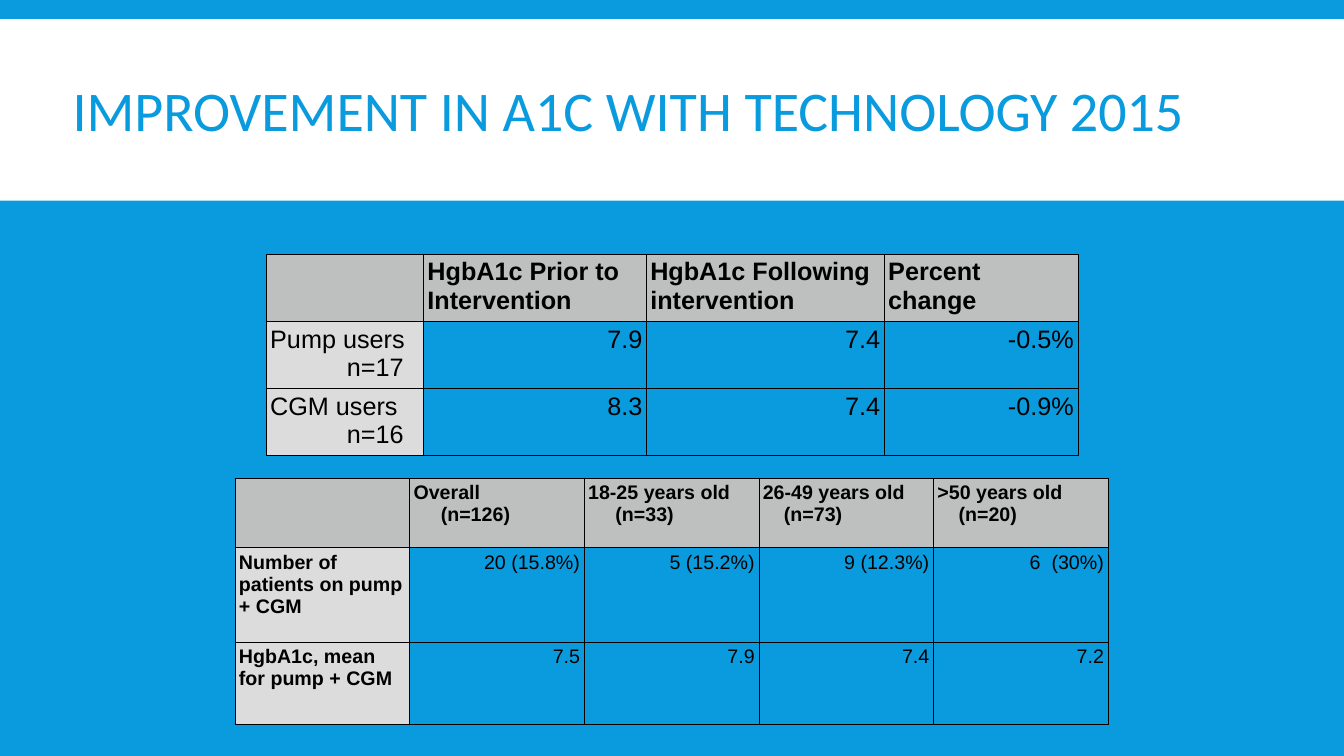
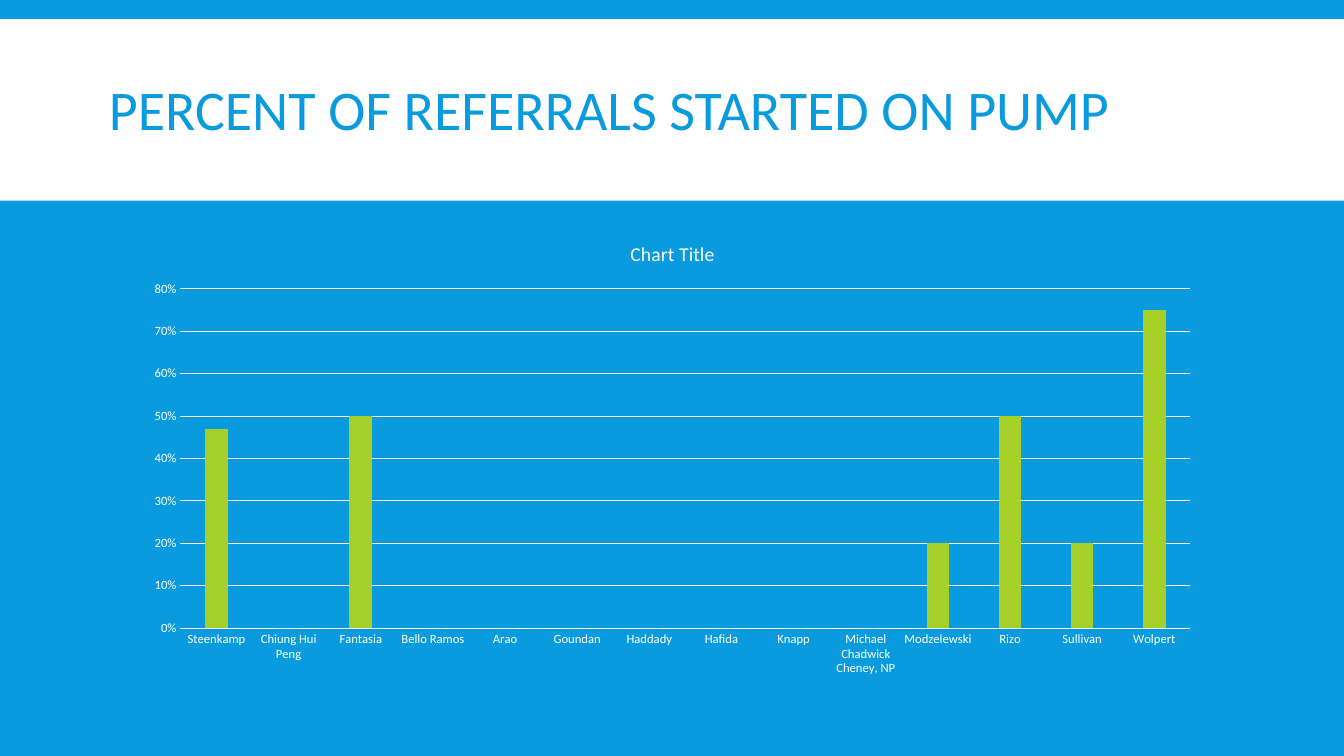
from dataclasses import dataclass
from typing import Any

from lxml.etree import SubElement
from pptx import Presentation
from pptx.chart.data import CategoryChartData
from pptx.dml.color import RGBColor
from pptx.enum.chart import XL_CHART_TYPE, XL_TICK_MARK
from pptx.enum.shapes import MSO_SHAPE
from pptx.enum.text import MSO_ANCHOR, MSO_AUTO_SIZE, PP_ALIGN
from pptx.oxml import parse_xml
from pptx.oxml.ns import nsdecls, qn
from pptx.presentation import Presentation as Deck
from pptx.slide import Slide
from pptx.table import _Cell as Cell
from pptx.text.text import Font
from pptx.util import Inches, Pt

BLUE = "099BDD"
WHITE = "FFFFFF"
BLACK = "000000"
GREEN = "A5D028"
AMBER = "FFC000"
HEADER_GREY = "BEC0BF"
LABEL_GREY = "DCDCDC"
HEADING_FONT = "Calibri"
TABLE_FONT = "Arial"
THIN, THICK = 0.35, 0.75
SLIDE_WIDTH = 13.33

TITLE_FRAME = {
    "vertical_anchor": MSO_ANCHOR.MIDDLE,
    "auto_size": MSO_AUTO_SIZE.NONE,
    "word_wrap": True,
}
TITLE_PARAGRAPH = {"alignment": PP_ALIGN.LEFT, "line_spacing": 0.85}
CELL_MARGINS = {
    f"margin_{side}": Inches(0.04) for side in ("left", "top", "right", "bottom")
}


@dataclass(frozen=True)
class Box:
    left: float
    top: float
    width: float
    height: float

    def lengths(self) -> tuple[Inches, ...]:
        return tuple(
            Inches(value) for value in (self.left, self.top, self.width, self.height)
        )


@dataclass(frozen=True)
class TableContent:
    left: float
    top: float
    columns: list[float]
    heights: list[float]
    rows: list[list[str]]
    size: int
    bold_labels: bool
    indents: list[float]


A1C_TABLE = TableContent(
    left=2.64,
    top=2.52,
    columns=[1.56, 2.21, 2.36, 1.92],
    heights=[2 / 3] * 3,
    rows=[
        ["", "HgbA1c Prior to Intervention", "HgbA1c Following intervention", "Percent change"],
        ["Pump users\nn=17", "7.9", "7.4", "-0.5%"],
        ["CGM users\nn=16", "8.3", "7.4", "-0.9%"],
    ],
    size=18,
    bold_labels=False,
    indents=[0.76, 0, 0, 0],
)

AGE_TABLE = TableContent(
    left=2.33,
    top=4.74,
    columns=[8.66 / 5] * 5,
    heights=[0.69, 0.94, 0.82],
    rows=[
        ["", "Overall\n(n=126)", "18-25 years old\n(n=33)", "26-49 years old\n(n=73)", ">50 years old\n(n=20)"],
        ["Number of patients on pump + CGM", "20 (15.8%)", "5 (15.2%)", "9 (12.3%)", "6  (30%)"],
        ["HgbA1c, mean for pump + CGM", "7.5", "7.9", "7.4", "7.2"],
    ],
    size=14,
    bold_labels=True,
    indents=[0, 0.27, 0.27, 0.21, 0.21],
)

REFERRALS = {
    "Steenkamp": 0.47,
    "Chiung Hui Peng": 0,
    "Fantasia": 0.5,
    "Bello Ramos": 0,
    "Arao": 0,
    "Goundan": 0,
    "Haddady": 0,
    "Hafida": 0,
    "Knapp": 0,
    "Michael Chadwick Cheney, NP": 0,
    "Modzelewski": 0.2,
    "Rizo": 0.5,
    "Sullivan": 0.2,
    "Wolpert": 0.75,
}


def colour(value: str) -> RGBColor:
    return RGBColor.from_string(value)


def apply_format(target: Any, values: dict[str, Any]) -> None:
    for name, value in values.items():
        setattr(target, name, value)


def format_font(font: Font, name: str, size: float, fill: str, bold: bool = False) -> None:
    apply_format(font, {"name": name, "size": Pt(size), "bold": bold})
    font.color.rgb = colour(fill)


def fill_solid(fill: Any, value: str) -> None:
    fill.solid()
    fill.fore_color.rgb = colour(value)


def add_titled_slide(presentation: Deck, text: str, box: Box) -> Slide:
    slide = presentation.slides.add_slide(presentation.slide_layouts[5])
    title = slide.shapes.title
    apply_format(title, dict(zip(("left", "top", "width", "height"), box.lengths())))
    title.text = text
    apply_format(title.text_frame, TITLE_FRAME)
    paragraph = title.text_frame.paragraphs[0]
    apply_format(paragraph, TITLE_PARAGRAPH)
    format_font(paragraph.runs[0].font, HEADING_FONT, 40, BLUE)
    return slide


def add_title_band(slide: Slide) -> None:
    box = Box(0, 0.19, SLIDE_WIDTH, 1.8)
    band = slide.shapes.add_shape(MSO_SHAPE.RECTANGLE, *box.lengths())
    band.shadow.inherit = False
    fill_solid(band.fill, WHITE)
    band.line.fill.background()
    slide.slide_layout.shapes.element.insert(2, band.element)


def set_borders(cell: Cell, row: int, column: int) -> None:
    widths = {
        "L": THICK if row and column == 1 else THIN,
        "R": THICK if row and column == 0 else THIN,
        "T": THICK if row == 1 else THIN,
        "B": THICK if row == 0 else THIN,
    }
    properties = cell._tc.get_or_add_tcPr()
    for position, (side, width) in enumerate(widths.items()):
        line = parse_xml(f'<a:ln{side} {nsdecls("a")} w="{Pt(width)}"/>')
        solid = SubElement(line, qn("a:solidFill"))
        SubElement(solid, qn("a:srgbClr"), val=BLACK)
        properties.insert(position, line)


def fill_cell(cell: Cell, content: TableContent, row: int, column: int) -> None:
    apply_format(cell, CELL_MARGINS)
    if row and column:
        cell.fill.background()
    else:
        fill_solid(cell.fill, LABEL_GREY if row else HEADER_GREY)
    set_borders(cell, row, column)
    cell.text = content.rows[row][column]
    bold = row == 0 or (column == 0 and content.bold_labels)
    for position, paragraph in enumerate(cell.text_frame.paragraphs):
        paragraph.alignment = PP_ALIGN.RIGHT if row and column else PP_ALIGN.LEFT
        format_font(paragraph.font, TABLE_FONT, content.size, BLACK, bold)
        for run in paragraph.runs:
            format_font(run.font, TABLE_FONT, content.size, BLACK, bold)
        if position:
            indent = Inches(content.indents[column])
            paragraph._p.get_or_add_pPr().set("marL", str(indent))


def add_data_table(slide: Slide, content: TableContent) -> None:
    box = Box(content.left, content.top, sum(content.columns), sum(content.heights))
    table = slide.shapes.add_table(
        len(content.heights), len(content.columns), *box.lengths()
    ).table
    apply_format(table, {"first_row": False, "horz_banding": False})
    for column, width in zip(table.columns, content.columns):
        column.width = Inches(width)
    for row, height in zip(table.rows, content.heights):
        row.height = Inches(height)
    for row, texts in enumerate(content.rows):
        for column in range(len(texts)):
            fill_cell(table.cell(row, column), content, row, column)


def add_referral_chart(slide: Slide) -> None:
    data = CategoryChartData(number_format="0%")
    data.categories = list(REFERRALS)
    data.add_series("Series 1", [])
    data.add_series("Series 2", list(REFERRALS.values()))
    box = Box(1.32, 2.2, 10.7, 4.6)
    chart = slide.shapes.add_chart(
        XL_CHART_TYPE.COLUMN_CLUSTERED, *box.lengths(), data
    ).chart
    format_font(chart.font, HEADING_FONT, 10, WHITE)
    apply_format(chart, {"has_legend": False, "has_title": True})
    title_frame = chart.chart_title.text_frame
    title_frame.text = "Chart Title"
    format_font(title_frame.paragraphs[0].runs[0].font, HEADING_FONT, 14, WHITE)

    plot = chart.plots[0]
    apply_format(plot, {"gap_width": 219, "overlap": -27, "vary_by_categories": False})
    for series, fill in zip(plot.series, (AMBER, GREEN)):
        fill_solid(series.format.fill, fill)

    for axis in (chart.category_axis, chart.value_axis):
        apply_format(
            axis,
            {"major_tick_mark": XL_TICK_MARK.NONE, "minor_tick_mark": XL_TICK_MARK.NONE},
        )
        format_font(axis.tick_labels.font, HEADING_FONT, 9, WHITE)
    value_axis = chart.value_axis
    apply_format(
        value_axis,
        {
            "minimum_scale": 0,
            "maximum_scale": 0.8,
            "major_unit": 0.1,
            "has_major_gridlines": True,
        },
    )
    apply_format(
        value_axis.tick_labels, {"number_format": "0%", "number_format_is_linked": False}
    )
    value_axis.format.line.fill.background()
    for line in (chart.category_axis.format.line, value_axis.major_gridlines.format.line):
        line.width = Pt(0.75)
        line.color.rgb = colour(WHITE)


def main() -> None:
    presentation = Presentation()
    apply_format(
        presentation, {"slide_width": Inches(SLIDE_WIDTH), "slide_height": Inches(7.5)}
    )
    fill_solid(presentation.slide_master.background.fill, BLUE)

    improvement_slide = add_titled_slide(
        presentation, "IMPROVEMENT IN A1C WITH TECHNOLOGY 2015", Box(0.62, 0.31, 12.2, 1.65)
    )
    add_title_band(improvement_slide)
    for content in (A1C_TABLE, AGE_TABLE):
        add_data_table(improvement_slide, content)

    referral_slide = add_titled_slide(
        presentation, "PERCENT OF REFERRALS STARTED ON PUMP", Box(0.98, 0.3, 11.38, 1.65)
    )
    add_referral_chart(referral_slide)
    presentation.save("out.pptx")


if __name__ == "__main__":
    main()
